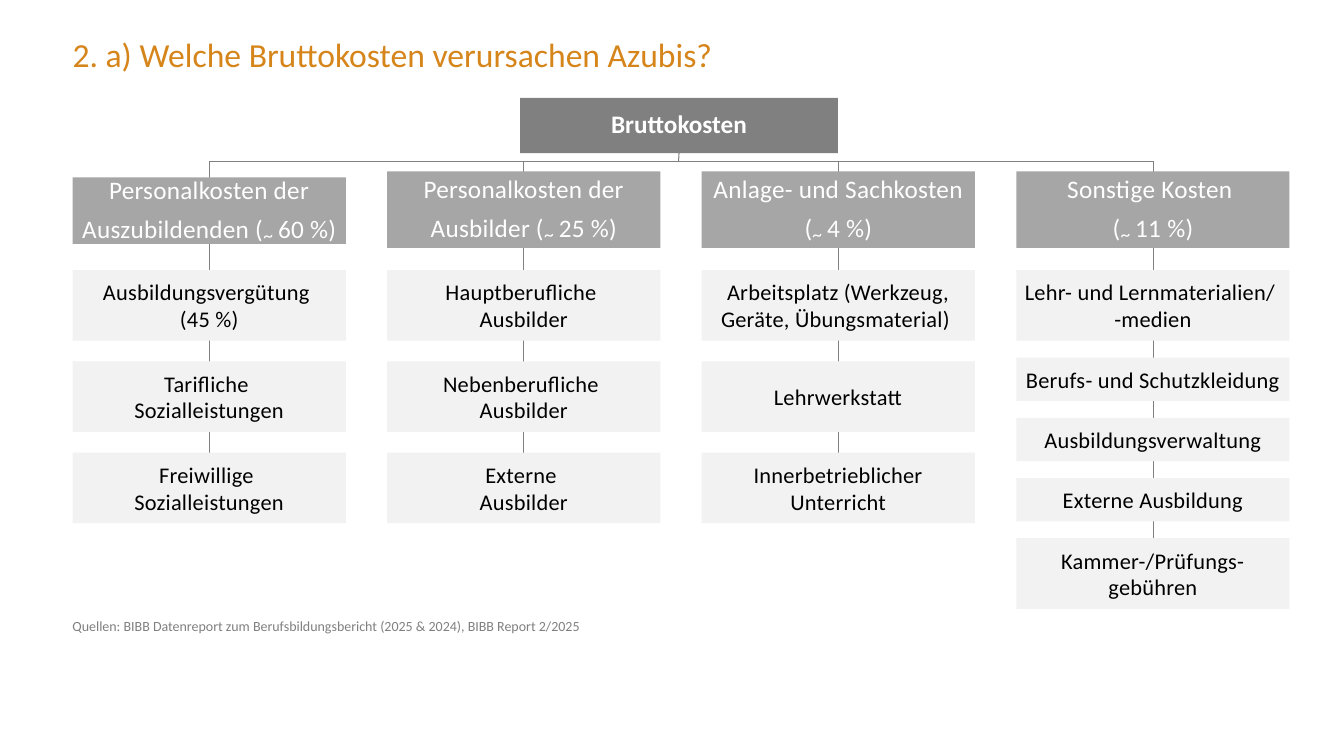
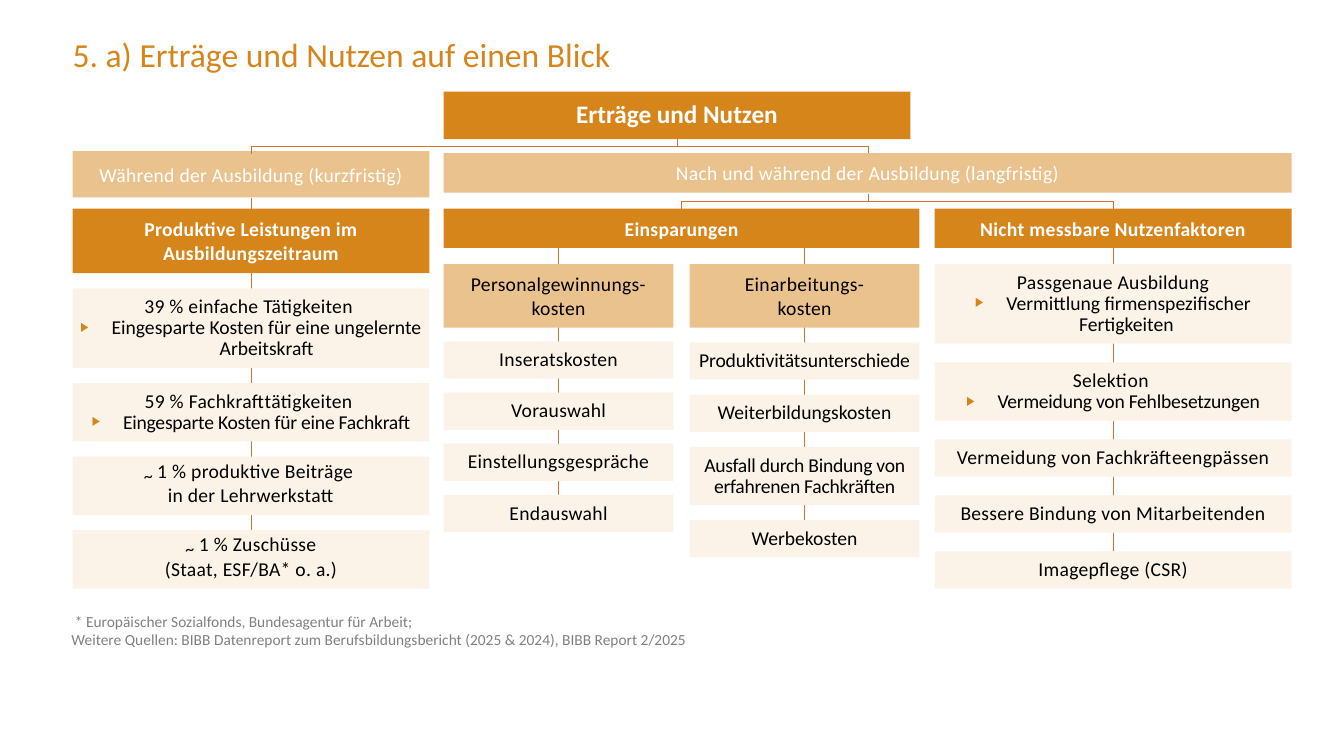
from copy import deepcopy
from lxml import etree
from pptx import Presentation
from pptx.dml.color import RGBColor
from pptx.enum.shapes import MSO_CONNECTOR as Connector, MSO_SHAPE as Shape
from pptx.enum.text import MSO_ANCHOR as Anchor, MSO_AUTO_SIZE as AutoSize, PP_ALIGN as Align
from pptx.oxml.ns import qn
from pptx.util import Inches, Pt

# Theme: colours, line widths, text styles and box styles
THEME = {
    "font": "Calibri",
    "orange": "D6851B", "sand": "EAC28D", "cream": "FBF3E8", "rust": "D37230",
    "dark": "808080", "middle": "A6A6A6", "light": "F2F2F2",
    "white": "FFFFFF", "black": "000000",
    "thin": 0.5, "medium": 0.75,
    "padding": (0.04, 0.08, 0.04, 0.08),
}
TITLE = dict(size=24, color="orange", align=Align.LEFT, line_spacing=0.9)
NOTE = dict(color="dark", align=Align.LEFT, anchor=Anchor.TOP, padding=(0.1, 0.05, 0.1, 0.05))
ROOT = dict(size=18, color="white", bold=True, line_spacing=0.9, padding=(0, 0, 0, 0))
GREY_GROUP = dict(fill="middle", size=18, color="white", tilde_size=24, spacing=0.2)
GREY_ITEM = dict(fill="light", size=16, spacing=0.2)
PHASE = dict(fill="sand", size=14, color="white", spacing=0.2)
HEADER = dict(fill="orange", size=14, color="white", bold=True, spacing=0.2)
SUBHEADER = dict(fill="sand", size=14, spacing=0.2)
ITEM = dict(fill="cream", size=14, spacing=0.2, line_spacing=Pt(15), tilde_size=22)

# Content of slide 1: group, group top and height, stack bottom, items with heights
COSTS = [
    ("Personalkosten der Auszubildenden (~ 60 %)", 1.76, 0.66, 5.19, [
        ("Ausbildungsvergütung \n(45 %)", 0.7),
        ("Tarifliche \nSozialleistungen", 0.7),
        ("Freiwillige \nSozialleistungen", 0.7)]),
    ("Personalkosten der Ausbilder (~ 25 %)", 1.7, 0.76, 5.19, [
        ("Hauptberufliche \nAusbilder", 0.7),
        ("Nebenberufliche \nAusbilder", 0.7),
        ("Externe \nAusbilder", 0.7)]),
    ("Anlage- und Sachkosten (~ 4 %)", 1.7, 0.76, 5.19, [
        ("Arbeitsplatz (Werkzeug, Geräte, Übungsmaterial) ", 0.7),
        ("Lehrwerkstatt", 0.7),
        ("Innerbetrieblicher Unterricht", 0.7)]),
    ("Sonstige Kosten \n(~ 11 %)", 1.7, 0.76, 6.04, [
        ("Lehr- und Lernmaterialien/ \n-medien", 0.7),
        ("Berufs- und Schutzkleidung", 0.43),
        ("Ausbildungsverwaltung", 0.43),
        ("Externe Ausbildung", 0.43),
        ("Kammer-/Prüfungs-gebühren", 0.7)]),
]

# Content of slide 2: items are text, height, style and, where needed, changes to it
DURING = [
    ("Produktive Leistungen im Ausbildungszeitraum", 0.64, HEADER, dict(line_spacing=Pt(17))),
    ("39 % einfache Tätigkeiten ", 0.79, ITEM,
     dict(bullet="Eingesparte Kosten für eine ungelernte Arbeitskraft", bullet_spacing=0)),
    ("59 % Fachkrafttätigkeiten ", 0.58, ITEM,
     dict(bullet="Eingesparte Kosten für eine Fachkraft", bullet_spacing=-0.2)),
    ("~ 1 % produktive Beiträge \nin der Lehrwerkstatt", 0.58, ITEM),
    ("~ 1 % Zuschüsse\n(Staat, ESF/BA* o. a.)", 0.58, ITEM),
]
RECRUITING = [
    ("Personalgewinnungs-kosten", 0.63, SUBHEADER),
    ("Inseratskosten", 0.37, ITEM),
    ("Vorauswahl", 0.37, ITEM),
    ("Einstellungsgespräche", 0.37, ITEM),
    ("Endauswahl", 0.37, ITEM),
]
TRAINING = [
    ("Einarbeitungs-\nkosten", 0.63, SUBHEADER),
    ("Produktivitätsunterschiede", 0.37, ITEM, dict(spacing=-0.1)),
    ("Weiterbildungskosten", 0.37, ITEM, dict(spacing=0)),
    ("Ausfall durch Bindung von erfahrenen Fachkräften", 0.58, ITEM, dict(spacing=-0.2)),
    ("Werbekosten", 0.37, ITEM, dict(spacing=0)),
]
BENEFITS = [
    ("Passgenaue Ausbildung", 0.79, ITEM,
     dict(bullet="Vermittlung firmenspezifischer Fertigkeiten ", bullet_spacing=0)),
    ("Selektion ", 0.58, ITEM,
     dict(bullet="Vermeidung von Fehlbesetzungen", bullet_spacing=-0.2)),
    ("Vermeidung von Fachkräfteengpässen", 0.37, ITEM),
    ("Bessere Bindung von Mitarbeitenden", 0.37, ITEM),
    ("Imagepflege (CSR)", 0.37, ITEM),
]


def rgb(name):
    return RGBColor.from_string(THEME[name])


# Text
def add_run(paragraph, text, size, color, bold, spacing, baseline=0):
    run = paragraph.add_run()
    run.text = text
    run.font.name, run.font.size, run.font.bold = THEME["font"], Pt(size), bold
    run.font.color.rgb = rgb(color)
    properties = run.font._element
    properties.set("spc", str(round(spacing * 100)))
    if baseline:
        properties.set("baseline", str(baseline * 1000))
    return properties


def add_bullet(paragraph):
    properties = paragraph._p.get_or_add_pPr()
    properties.set("marL", str(Inches(0.31)))
    properties.set("indent", str(Inches(-0.31)))
    color = etree.SubElement(properties, qn("a:buClr"))
    etree.SubElement(color, qn("a:srgbClr")).set("val", THEME["orange"])
    for tag, key, value in (("a:buSzPct", "val", "65000"),
                            ("a:buFont", "typeface", THEME["font"]),
                            ("a:buChar", "char", "▶")):
        etree.SubElement(properties, qn(tag)).set(key, value)


def write_text(shape, *texts, size=14, color="black", bold=False, spacing=0, align=Align.CENTER,
               anchor=Anchor.MIDDLE, padding=THEME["padding"], line_spacing=None,
               tilde_size=None, bullet=None, bullet_spacing=0):
    frame = shape.text_frame
    frame.word_wrap, frame.auto_size, frame.vertical_anchor = True, AutoSize.NONE, anchor
    (frame.margin_left, frame.margin_top,
     frame.margin_right, frame.margin_bottom) = map(Inches, padding)
    entries = [(text, False) for text in texts] + ([(bullet, True)] if bullet else [])
    for index, (text, bulleted) in enumerate(entries):
        paragraph = frame.add_paragraph() if index else frame.paragraphs[0]
        if bulleted:
            add_bullet(paragraph)
        paragraph.alignment = align
        if line_spacing:
            paragraph.line_spacing = line_spacing
        look = (color, bold, bullet_spacing if bulleted else spacing)
        for number, line in enumerate(text.split("\n")):
            if number:
                paragraph.add_line_break()
                paragraph._p[-1].append(deepcopy(properties))
            before, tilde, after = line.partition("~ ")
            if before:
                properties = add_run(paragraph, before, size, *look)
            if tilde:
                add_run(paragraph, tilde, tilde_size, *look, baseline=-14)
            if after:
                properties = add_run(paragraph, after, size, *look)


def add_text(slide, place, *texts, **style):
    write_text(slide.shapes.add_textbox(*map(Inches, place)), *texts, **style)


def add_box(slide, place, text, fill, **style):
    shape = slide.shapes.add_shape(Shape.RECTANGLE, *map(Inches, place))
    shape.shadow.inherit = False
    shape.fill.solid()
    shape.fill.fore_color.rgb = rgb(fill)
    shape.line.fill.background()
    write_text(shape, text, **style)
    return shape


def add_stack(slide, left, width, top, bottom, items):
    """Spread boxes evenly from top to bottom; return the last one."""
    gap = (bottom - top - sum(item[1] for item in items)) / (len(items) - 1)
    for text, height, style, *changes in items:
        format_ = {**style, **(changes[0] if changes else {})}
        shape = add_box(slide, (left, top, width, height), text, **format_)
        top += height + gap
    return shape


# Lines
def style_line(connector, color, width):
    connector.line.color.rgb = rgb(color)
    connector.line.width = Pt(width)
    etree.SubElement(connector._element.spPr, qn("a:effectLst"))


def add_line(slide, x1, y1, x2, y2, color, width, start=None, end=None):
    """Straight line behind the boxes, from the bottom of start to the top of end."""
    connector = slide.shapes.add_connector(Connector.STRAIGHT, *map(Inches, (x1, y1, x2, y2)))
    if start is not None:
        connector.begin_connect(start, 2)
    if end is not None:
        connector.end_connect(end, 0)
    style_line(connector, color, width)
    slide.shapes._spTree.insert(2, connector._element)


def add_elbow(slide, x1, y1, x2, y2, color, width):
    """Elbow that leaves downwards: a horizontal one turned about its centre."""
    drop, reach = y2 - y1, abs(x2 - x1)
    left, top = (x1 + x2 - drop) / 2, (y1 + y2 - reach) / 2
    connector = slide.shapes.add_connector(
        Connector.ELBOW, *map(Inches, (left, top, left + drop, top + reach)))
    frame = connector._element.spPr.find(qn("a:xfrm"))
    frame.set("rot", str((90 if x2 < x1 else 270) * 60000))
    if x2 > x1:
        frame.set("flipH", "1")
    style_line(connector, color, width)


# Slides
def add_slide(presentation, title):
    slide = presentation.slides.add_slide(presentation.slide_layouts[6])
    add_text(slide, (0.72, 0.32, 9.84, 0.49), title, padding=(0, 0, 0, 0), **TITLE)
    return slide


def build_costs(presentation):
    slide = add_slide(presentation, "2. a) Welche Bruttokosten verursachen Azubis?")
    left, width, pitch, bus = 0.72, 2.71, 3.12, 1.6
    centers = [left + pitch * column + width / 2 for column in range(len(COSTS))]
    root = add_box(slide, (5.16, 0.97, 3.15, 0.55), "Bruttokosten", "dark", **ROOT)
    add_line(slide, 6.73, 1.52, 6.73, bus, "dark", THEME["medium"], start=root)
    add_line(slide, centers[-1], bus, centers[0], bus, "dark", THEME["medium"])
    for center, (group, top, height, bottom, entries) in zip(centers, COSTS):
        x = center - width / 2
        add_box(slide, (x, top, width, height), group, **GREY_GROUP)
        items = [(text, size, GREY_ITEM) for text, size in entries]
        last = add_stack(slide, x, width, 2.68, bottom, items)
        add_line(slide, center, bus, center, bottom, "dark", THEME["thin"], end=last)
    add_text(slide, (0.62, 6.08, 7.99, 0.27),
             "Quellen: BIBB Datenreport zum Berufsbildungsbericht (2025 & 2024), BIBB Report 2/2025",
             size=10, **NOTE)


def build_benefits(presentation):
    slide = add_slide(presentation, "5. a) Erträge und Nutzen auf einen Blick")
    line = ("rust", THEME["thin"])
    wide, narrow = 3.54, 2.28
    first, second, third, fourth = 0.72, 4.4, 6.84, 9.27

    # Upper levels
    add_box(slide, (second, 0.91, 4.63, 0.47), "Erträge und Nutzen", "orange", **ROOT)
    during = add_box(slide, (first, 1.5, wide, 0.46),
                     "Während der Ausbildung (kurzfristig)", **PHASE)
    add_box(slide, (second, 1.52, 8.41, 0.39),
            "Nach und während der Ausbildung (langfristig)", **PHASE)
    savings = (second, 2.07, 4.72, 0.39)
    add_box(slide, savings, "Einsparungen", **HEADER)
    factors = add_box(slide, (fourth, 2.07, wide, 0.39),
                      "Nicht messbare Nutzenfaktoren", **HEADER)

    # Columns, each with a line running down behind it
    savings_bottom = savings[1] + savings[3]
    for left, width, top, bottom, items, start, line_top in (
            (first, wide, 2.07, 5.84, DURING, during, 1.96),
            (second, narrow, 2.62, 5.28, RECRUITING, None, savings_bottom),
            (third, narrow, 2.62, 5.53, TRAINING, None, savings_bottom),
            (fourth, wide, 2.62, 5.84, BENEFITS, factors, 2.46)):
        last = add_stack(slide, left, width, top, bottom, items)
        center = left + width / 2
        add_line(slide, center, line_top, center, bottom, *line, start=start, end=last)

    # Branches
    for x1, y1, x2, y2 in ((6.72, 1.38, 2.49, 1.53), (6.72, 1.38, 8.61, 1.52),
                           (8.61, 1.92, 6.76, 2.07), (8.61, 1.92, 11.04, 2.07)):
        add_elbow(slide, x1, y1, x2, y2, *line)
    add_text(slide, (0.61, 6.02, 8.89, 0.66),
             " * Europäischer Sozialfonds, Bundesagentur für Arbeit;",
             "Weitere Quellen: BIBB Datenreport zum Berufsbildungsbericht (2025 & 2024), "
             "BIBB Report 2/2025", size=11, **NOTE)


def main():
    presentation = Presentation()
    presentation.slide_width, presentation.slide_height = Inches(13.33), Inches(7.5)
    build_costs(presentation)
    build_benefits(presentation)
    presentation.save("out.pptx")


if __name__ == "__main__":
    main()
